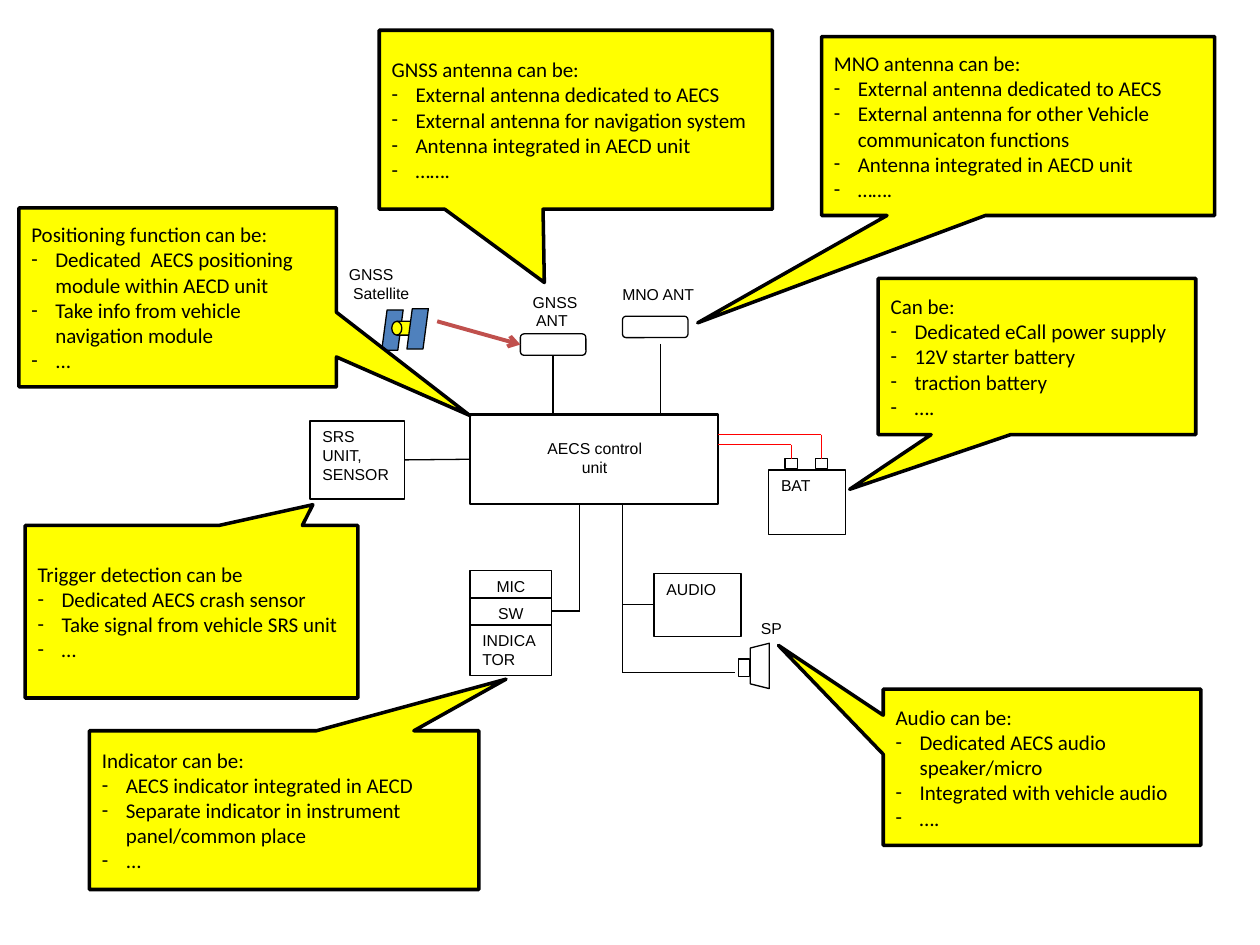
from lxml import etree
from pptx import Presentation
from pptx.dml.color import RGBColor
from pptx.enum.shapes import MSO_CONNECTOR, MSO_SHAPE
from pptx.enum.text import MSO_ANCHOR, PP_ALIGN
from pptx.oxml.ns import qn
from pptx.util import Inches, Pt

BLACK = RGBColor(0x00, 0x00, 0x00)
WHITE = RGBColor(0xFF, 0xFF, 0xFF)
YELLOW = RGBColor(0xFF, 0xFF, 0x00)
BLUE = RGBColor(0x4F, 0x81, 0xBD)
RED = RGBColor(0xFF, 0x00, 0x00)
BRICK = RGBColor(0xC0, 0x50, 0x4D)

RECTANGLE = MSO_SHAPE.RECTANGLE
ROUNDED = MSO_SHAPE.ROUNDED_RECTANGLE
CALLOUT = MSO_SHAPE.RECTANGULAR_CALLOUT
PARALLELOGRAM = MSO_SHAPE.PARALLELOGRAM
DRUM = MSO_SHAPE.FLOWCHART_DIRECT_ACCESS_STORAGE
TRAPEZOID = MSO_SHAPE.TRAPEZOID
STRAIGHT = MSO_CONNECTOR.STRAIGHT
LEFT, CENTER = PP_ALIGN.LEFT, PP_ALIGN.CENTER
TOP, MIDDLE = MSO_ANCHOR.TOP, MSO_ANCHOR.MIDDLE
TOP_SIDE, LEFT_SIDE, BOTTOM_SIDE, RIGHT_SIDE = range(4)


def write_text(frame, lines, font="Arial", size=9, align=LEFT, anchor=TOP, bullets=False):
    frame.word_wrap = True
    frame.vertical_anchor = anchor
    for index, line in enumerate(lines):
        paragraph = frame.paragraphs[0] if index == 0 else frame.add_paragraph()
        paragraph.alignment = align
        if bullets and index > 0:
            properties = paragraph._p.get_or_add_pPr()
            properties.set("marL", str(Inches(0.19)))
            properties.set("indent", str(-Inches(0.19)))
            etree.SubElement(properties, qn("a:buFont")).set("typeface", font)
            etree.SubElement(properties, qn("a:buChar")).set("char", "-")
        run = paragraph.add_run()
        run.text = line
        run.font.name = font
        run.font.size = Pt(size)
        run.font.color.rgb = BLACK


class Diagram:
    line_width = 0.75

    def __init__(self, slide):
        self.slide = slide

    def shape(self, kind, left, top, width, height, fill=None, line_width=line_width):
        shape = self.slide.shapes.add_shape(
            kind, Inches(left), Inches(top), Inches(width), Inches(height))
        shape.shadow.inherit = False
        if fill is None:
            shape.fill.background()
        else:
            shape.fill.solid()
            shape.fill.fore_color.rgb = fill
        shape.line.color.rgb = BLACK
        shape.line.width = Pt(line_width)
        return shape

    def unit(self, lines, left, top, width, height, align=LEFT):
        shape = self.shape(RECTANGLE, left, top, width, height)
        write_text(shape.text_frame, lines, align=align)
        return shape

    def label(self, lines, left, top, width, height, align=LEFT):
        box = self.slide.shapes.add_textbox(
            Inches(left), Inches(top), Inches(width), Inches(height))
        write_text(box.text_frame, lines, align=align)

    def callout(self, lines, left, top, width, height, tip):
        shape = self.shape(CALLOUT, left, top, width, height, YELLOW, 2)
        shape.adjustments[0], shape.adjustments[1] = tip
        write_text(shape.text_frame, lines, font="Calibri", size=12,
                   anchor=MIDDLE, bullets=True)

    def wire(self, start, end, color=BLACK, width=line_width, begin=None, finish=None, arrow=False):
        connector = self.slide.shapes.add_connector(
            STRAIGHT, *[Inches(value) for value in (*start, *end)])
        connector.line.color.rgb = color
        connector.line.width = Pt(width)
        if begin:
            connector.begin_connect(*begin)
        if finish:
            connector.end_connect(*finish)
        if arrow:
            line = connector.line._get_or_add_ln()
            etree.SubElement(line, qn("a:tailEnd")).set("type", "arrow")
        etree.SubElement(connector._element.spPr, qn("a:effectLst"))


def draw_units(diagram):
    control = diagram.shape(RECTANGLE, 3.73, 3.29, 1.97, 0.71, line_width=1.5)
    diagram.label(["AECS control unit"], 4.2, 3.43, 1.04, 0.48, CENTER)
    sensor = diagram.unit(["SRS", "UNIT,", "SENSOR"], 2.46, 3.34, 0.75, 0.62)
    diagram.unit(["MIC"], 3.73, 4.53, 0.65, 0.22, CENTER)
    switch = diagram.unit(["SW"], 3.73, 4.74, 0.65, 0.22, CENTER)
    diagram.unit(["INDICATOR"], 3.73, 4.96, 0.65, 0.4)
    audio = diagram.unit(["AUDIO"], 5.19, 4.55, 0.69, 0.5)

    diagram.wire((3.21, 3.65), (3.73, 3.64), begin=(sensor, RIGHT_SIDE),
                 finish=(control, LEFT_SIDE))
    diagram.wire((4.6, 4), (4.6, 4.85))
    diagram.wire((4.38, 4.85), (4.6, 4.85), begin=(switch, RIGHT_SIDE))
    diagram.wire((4.94, 4), (4.94, 5.34))
    diagram.wire((4.94, 4.8), (5.19, 4.8), finish=(audio, LEFT_SIDE))
    diagram.wire((4.94, 5.34), (5.83, 5.34))

    diagram.label(["SP"], 5.94, 4.86, 0.79, 0.23)
    diagram.shape(TRAPEZOID, 5.85, 5.21, 0.36, 0.15, WHITE).rotation = 270
    diagram.shape(RECTANGLE, 5.86, 5.23, 0.09, 0.14, WHITE)


def draw_antennas(diagram):
    diagram.label(["GNSS", " Satellite"], 2.67, 2.05, 0.73, 0.31)
    diagram.shape(PARALLELOGRAM, 3.03, 2.46, 0.17, 0.32, BLUE)
    drum = diagram.shape(DRUM, 3.11, 2.55, 0.24, 0.11, YELLOW)
    drum._element.spPr.xfrm.set("flipH", "1")
    diagram.shape(PARALLELOGRAM, 3.23, 2.45, 0.17, 0.32, BLUE)

    diagram.label(["GNSS", " ANT"], 4.13, 2.27, 1.04, 0.31)
    diagram.label(["MNO ANT"], 4.84, 2.21, 0.78, 0.3)
    gnss = diagram.shape(ROUNDED, 4.13, 2.65, 0.52, 0.17, WHITE)
    diagram.shape(ROUNDED, 4.94, 2.51, 0.52, 0.17, WHITE)
    diagram.wire((3.47, 2.55), (4.13, 2.73), BRICK, 2.25,
                 finish=(gnss, LEFT_SIDE), arrow=True)
    diagram.wire((4.39, 2.82), (4.39, 3.29), begin=(gnss, BOTTOM_SIDE))
    diagram.wire((5.24, 2.73), (5.24, 3.29))


def draw_battery(diagram):
    diagram.unit(["BAT"], 6.1, 3.73, 0.61, 0.51)
    for center, level in ((6.28, 3.53), (6.52, 3.45)):
        terminal = diagram.shape(RECTANGLE, center - 0.05, 3.64, 0.1, 0.08, WHITE)
        diagram.wire((5.7, level), (center, level), RED)
        diagram.wire((center, level), (center, 3.64), RED, finish=(terminal, TOP_SIDE))


def draw_callouts(diagram):
    diagram.callout(
        ["Can be:", "Dedicated eCall power supply", "12V starter battery",
         "traction battery", "…."],
        6.97, 2.21, 2.52, 1.24, (-0.59, 0.85))
    diagram.callout(
        ["MNO antenna can be:", "External antenna dedicated to AECS",
         "External antenna for other Vehicle communicaton functions",
         "Antenna integrated in AECD unit", "……."],
        6.52, 0.29, 3.12, 1.42, (-0.815, 1.1))
    diagram.callout(
        ["GNSS antenna can be:", "External antenna dedicated to AECS",
         "External antenna for navigation system",
         "Antenna integrated in AECD unit", "……."],
        3.01, 0.24, 3.12, 1.42, (-0.08, 0.91))
    diagram.callout(
        ["Audio can be:", "Dedicated AECS audio speaker/micro",
         "Integrated with vehicle audio", "…."],
        7.01, 5.47, 2.52, 1.24, (-0.83, -0.78))
    diagram.callout(
        ["Indicator can be:", "AECS indicator integrated in AECD",
         "Separate indicator in instrument panel/common place", "..."],
        0.71, 5.8, 3.09, 1.26, (0.57, -0.825))
    diagram.callout(
        ["Positioning function can be:",
         "Dedicated  AECS positioning module within AECD unit",
         "Take info from vehicle navigation module", "..."],
        0.15, 1.65, 2.52, 1.42, (0.92, 0.66))
    diagram.callout(
        ["Trigger detection can be", "Dedicated AECS crash sensor",
         "Take signal from vehicle SRS unit", "…"],
        0.2, 4.17, 2.64, 1.37, (0.365, -0.62))


def main():
    presentation = Presentation()
    presentation.slide_width = Inches(10)
    presentation.slide_height = Inches(7.5)
    diagram = Diagram(presentation.slides.add_slide(presentation.slide_layouts[6]))
    draw_units(diagram)
    draw_antennas(diagram)
    draw_battery(diagram)
    draw_callouts(diagram)
    presentation.save("out.pptx")


if __name__ == "__main__":
    main()
